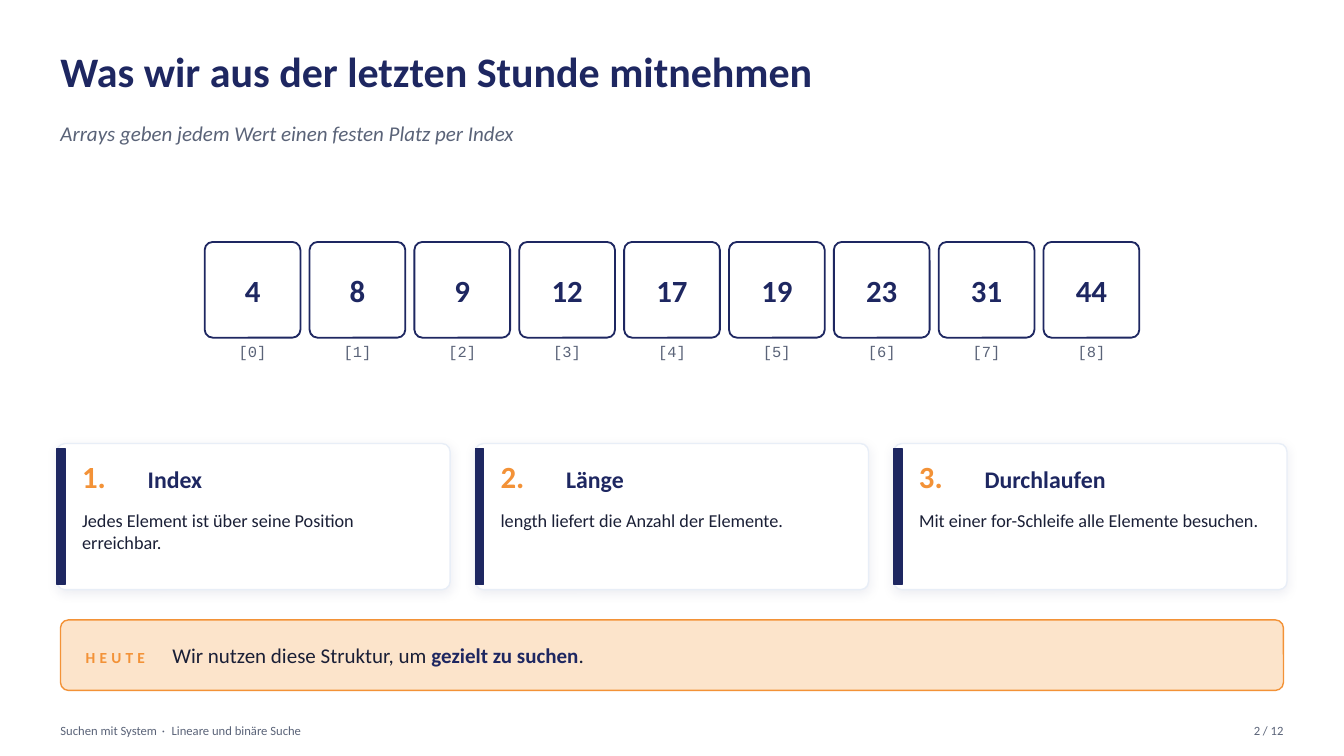
from dataclasses import dataclass

import pptx
import pptx.dml.color
import pptx.enum.shapes
import pptx.enum.text
import pptx.oxml
import pptx.oxml.ns
import pptx.util
from lxml import etree

Inches = pptx.util.Inches
SHAPE = pptx.enum.shapes.MSO_SHAPE
ALIGN = pptx.enum.text.PP_ALIGN
ANCHOR = pptx.enum.text.MSO_ANCHOR


@dataclass(frozen=True)
class Theme:
    navy: str = "1E2761"
    orange: str = "F39237"
    peach: str = "FCE4CB"
    slate: str = "5A6378"
    ink: str = "1A1F36"
    mist: str = "E8EEF7"
    white: str = "FFFFFF"
    body_font: str = "Calibri"
    code_font: str = "Courier New"
    title: int = 30
    number: int = 22
    heading: int = 17
    lead: int = 15
    body: int = 13
    label: int = 11
    footer: int = 9
    corner: float = 0.08


THEME = Theme()
WIDTH, HEIGHT, MARGIN = 13.33, 7.5, 0.6
CONTENT_WIDTH = WIDTH - 2 * MARGIN


def rgb(color):
    return pptx.dml.color.RGBColor.from_string(color)


def style(font, size, color, bold=False, italic=False, name=THEME.body_font):
    font.size = pptx.util.Pt(size)
    font.color.rgb = rgb(color)
    font.bold = bold
    font.italic = italic
    font.name = name


def add_frame(slide, left, top, width, height, middle=False):
    frame = slide.shapes.add_textbox(
        Inches(left), Inches(top), Inches(width), Inches(height)
    ).text_frame
    frame.word_wrap = True
    frame.margin_left = frame.margin_top = frame.margin_right = frame.margin_bottom = 0
    frame.vertical_anchor = ANCHOR.MIDDLE if middle else ANCHOR.TOP
    return frame


def add_text(slide, box, text, size, color, align=ALIGN.LEFT, middle=False, **look):
    paragraph = add_frame(slide, *box, middle=middle).paragraphs[0]
    paragraph.text = text
    paragraph.alignment = align
    style(paragraph.font, size, color, **look)


def add_run(paragraph, text, size, color, bold=False, spacing=0):
    run = paragraph.add_run()
    run.text = text
    style(run.font, size, color, bold)
    if spacing:
        run.font._element.set("spc", str(int(spacing * 100)))


def add_panel(slide, box, fill, line, line_width=1, rounded=True):
    left, top, width, height = box
    kind = SHAPE.ROUNDED_RECTANGLE if rounded else SHAPE.RECTANGLE
    panel = slide.shapes.add_shape(
        kind, Inches(left), Inches(top), Inches(width), Inches(height)
    )
    if rounded:
        panel.adjustments[0] = THEME.corner / min(width, height)
    panel.shadow.inherit = False
    panel.fill.solid()
    panel.fill.fore_color.rgb = rgb(fill)
    panel.line.color.rgb = rgb(line)
    panel.line.width = pptx.util.Pt(line_width)
    return panel


def add_soft_shadow(panel):
    effects = panel._element.spPr.find(pptx.oxml.ns.qn("a:effectLst"))
    effects.append(pptx.oxml.parse_xml(
        f'<a:outerShdw {pptx.oxml.ns.nsdecls("a")} blurRad="{pptx.util.Pt(8)}" '
        f'dist="{pptx.util.Pt(2)}" dir="5400000" algn="t" rotWithShape="0">'
        f'<a:srgbClr val="{THEME.navy}"><a:alpha val="8000"/></a:srgbClr></a:outerShdw>'
    ))


def draw_header(slide, left, top, width, title, subtitle):
    add_text(slide, (left, top, width, 0.75), title, THEME.title, THEME.navy, bold=True)
    add_text(slide, (left, top + 0.75, width, 0.4), subtitle, THEME.lead, THEME.slate,
             italic=True)


def draw_array(slide, left, top, width, values, cell=0.95, gap=0.09):
    row_width = len(values) * (cell + gap) - gap
    start = left + (width - row_width) / 2
    for index, value in enumerate(values):
        x = start + index * (cell + gap)
        box = (x, top, cell, cell)
        add_panel(slide, box, THEME.white, THEME.navy, 1.3)
        add_text(slide, box, str(value), THEME.number, THEME.navy, ALIGN.CENTER,
                 middle=True, bold=True)
        add_text(slide, (x, top + cell + 0.04, cell, 0.3), f"[{index}]", THEME.label,
                 THEME.slate, ALIGN.CENTER, name=THEME.code_font)


def draw_card(slide, left, top, width, height, number, heading, body):
    add_soft_shadow(
        add_panel(slide, (left, top, width, height), THEME.white, THEME.mist)
    )
    add_panel(slide, (left, top + 0.05, 0.08, height - 0.1), THEME.navy, THEME.navy,
              rounded=False)
    add_text(slide, (left + 0.25, top + 0.15, 0.8, 0.35), f"{number}.", THEME.number,
             THEME.orange, middle=True, bold=True)
    add_text(slide, (left + 0.9, top + 0.18, width - 1, 0.35), heading, THEME.heading,
             THEME.navy, middle=True, bold=True)
    add_text(slide, (left + 0.25, top + 0.65, width - 0.45, height - 0.75), body,
             THEME.body, THEME.ink)


def draw_cards(slide, left, top, width, height, cards, card_width=3.9, gap=0.25):
    row_width = len(cards) * (card_width + gap) - gap
    start = left + (width - row_width) / 2
    for position, (heading, body) in enumerate(cards):
        draw_card(slide, start + position * (card_width + gap), top, card_width, height,
                  position + 1, heading, body)


def draw_today(slide, left, top, width, height, label, sentence):
    add_panel(slide, (left, top, width, height), THEME.peach, THEME.orange)
    message = add_frame(
        slide, left + 0.25, top, width - 0.5, height, middle=True
    ).paragraphs[0]
    tabs = etree.SubElement(message._p.get_or_add_pPr(), pptx.oxml.ns.qn("a:tabLst"))
    etree.SubElement(tabs, pptx.oxml.ns.qn("a:tab"), pos=str(Inches(0.86)), algn="l")
    add_run(message, label, THEME.label, THEME.orange, bold=True, spacing=3)
    add_run(message, "\t", THEME.lead, THEME.ink)
    for text, strong in sentence:
        add_run(message, text, THEME.lead, THEME.navy if strong else THEME.ink, strong)


def draw_footer(slide, left, top, width, course, topic, page):
    credit = add_frame(slide, left, top, 8, 0.3, middle=True).paragraphs[0]
    add_run(credit, course, THEME.footer, THEME.slate)
    add_run(credit, " · ", THEME.footer, THEME.slate, spacing=1.35)
    add_run(credit, topic, THEME.footer, THEME.slate)
    add_text(slide, (left + width - 0.8, top, 0.8, 0.3), page, THEME.footer, THEME.slate,
             ALIGN.RIGHT, middle=True)


def main():
    deck = pptx.Presentation()
    deck.slide_width, deck.slide_height = Inches(WIDTH), Inches(HEIGHT)
    slide = deck.slides.add_slide(deck.slide_layouts[6])
    draw_header(slide, MARGIN, 0.45, CONTENT_WIDTH,
                "Was wir aus der letzten Stunde mitnehmen",
                "Arrays geben jedem Wert einen festen Platz per Index")
    draw_array(slide, MARGIN, 2.4, CONTENT_WIDTH, [4, 8, 9, 12, 17, 19, 23, 31, 44])
    draw_cards(slide, MARGIN, 4.4, CONTENT_WIDTH, 1.45, [
        ("Index", "Jedes Element ist über seine Position erreichbar."),
        ("Länge", "length liefert die Anzahl der Elemente."),
        ("Durchlaufen", "Mit einer for-Schleife alle Elemente besuchen."),
    ])
    draw_today(slide, MARGIN, 6.15, CONTENT_WIDTH, 0.7, "HEUTE", [
        ("Wir nutzen diese Struktur, um ", False),
        ("gezielt zu suchen", True),
        (".", False),
    ])
    draw_footer(slide, MARGIN, 7.1, CONTENT_WIDTH, "Suchen mit System",
                "Lineare und binäre Suche", "2 / 12")
    deck.save("out.pptx")


if __name__ == "__main__":
    main()
